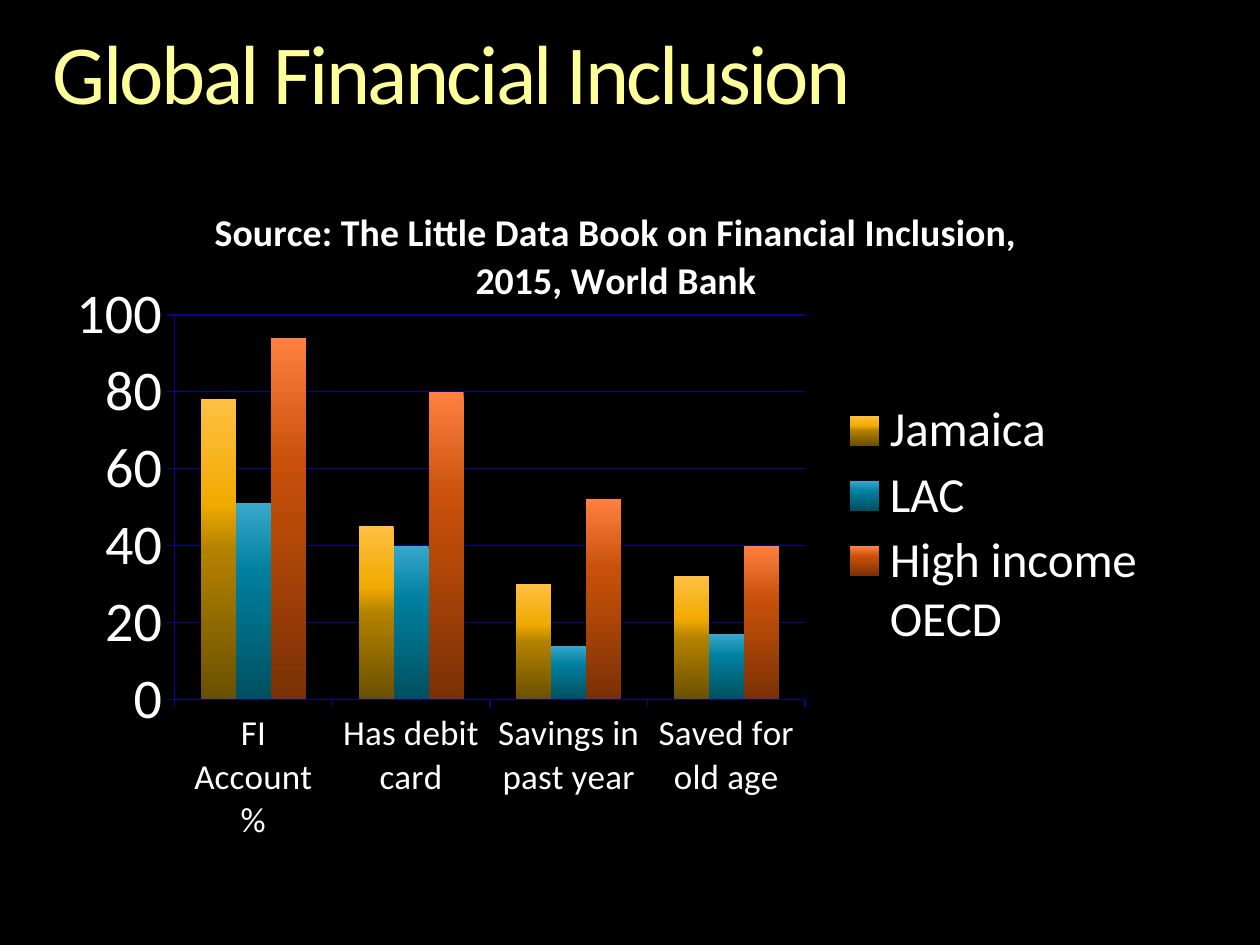
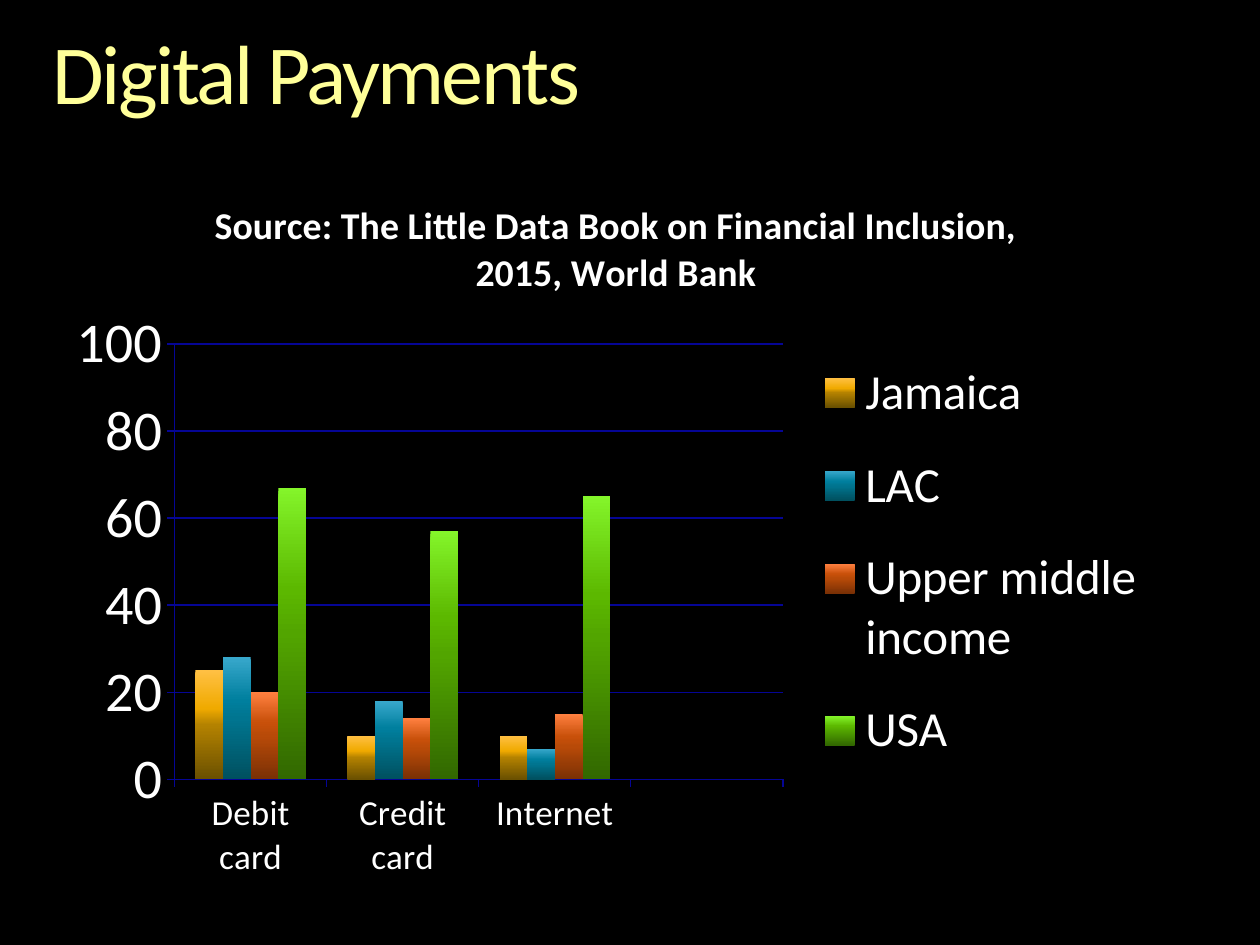
from dataclasses import dataclass

import lxml.etree
import pptx
import pptx.chart.data
import pptx.dml.color
import pptx.enum.chart
import pptx.enum.text
import pptx.oxml
import pptx.oxml.ns
import pptx.util


@dataclass(frozen=True)
class Theme:
    font: str = "Calibri"
    background: str = "000000"
    title: str = "FFFF99"
    text: str = "FFFFFF"
    lines: str = "050595"
    title_size: float = 48
    source_size: float = 21.6
    category_size: float = 20
    value_size: float = 32
    legend_size: float = 28
    line_width: float = 0.75
    # Bar colours from top to bottom, one row per series
    bars: tuple = (
        ("FFC043", "F0AA00", "B48200", "6A5000"),
        ("38A8CC", "007F9E", "007590", "00505F"),
        ("FF8040", "C8500A", "B84A08", "7A3005"),
        ("84F52A", "5CB800", "52A500", "326800"),
    )
    bar_stops: tuple = (0, 35, 50, 100)


theme = Theme()
qn = pptx.oxml.ns.qn
rgb = pptx.dml.color.RGBColor.from_string

SOURCE = "Source: The Little Data Book on Financial Inclusion, 2015, World Bank"

# Layout boxes are left, top, width, height as shares of the chart.
slides = [
    {
        "title": "Global Financial Inclusion",
        "categories": ["FI Account %", "Has debit card",
                       "Savings in past year", "Saved for old age"],
        "series": {
            "Jamaica": (78, 45, 30, 32),
            "LAC": (51, 40, 14, 17),
            "High income OECD": (94, 80, 52, 40),
        },
        "source_at": (0.14, 0.05),
        "plot_at": (0.11, 0.21, 0.57, 0.53),
        "legend_at": (0.71, 0.32, 0.28, 0.36),
    },
    {
        "title": "Digital Payments",
        "categories": ["Debit card", "Credit card", "Internet", ""],
        "series": {
            "Jamaica": (25, 10, 10, None),
            "LAC": (28, 18, 7, None),
            "Upper middle income": (20, 14, 15, None),
            "USA": (67, 57, 65, None),
        },
        "source_at": (0.14, 0.04),
        "plot_at": (0.11, 0.25, 0.55, 0.6),
        "legend_at": (0.69, 0.23, 0.3, 0.64),
    },
]


def place_chart_part(element, index, box, inner=False):
    """Give a chart part a fixed layout, as its child number index."""
    for old_layout in element.findall(qn("c:layout")):
        element.remove(old_layout)
    layout = pptx.oxml.parse_xml(
        f'<c:layout {pptx.oxml.ns.nsdecls("c")}><c:manualLayout/></c:layout>')
    settings = [("layoutTarget", "inner")] if inner else []
    settings += [("xMode", "edge"), ("yMode", "edge")]
    settings += zip("xywh", box)
    for name, value in settings:
        lxml.etree.SubElement(layout[0], qn(f"c:{name}")).set("val", str(value))
    element.insert(index, layout)


def style_font(font, size, color=theme.text, bold=False):
    font.name = theme.font
    font.size = pptx.util.Pt(size)
    font.bold = bold
    font.color.rgb = rgb(color)


presentation = pptx.Presentation()
presentation.slide_width = pptx.util.Inches(10)
presentation.slide_height = pptx.util.Inches(7.5)
master_fill = presentation.slide_master.background.fill
master_fill.solid()
master_fill.fore_color.rgb = rgb(theme.background)
left = pptx.util.Inches(0.42)

for content in slides:
    slide = presentation.slides.add_slide(presentation.slide_layouts[5])

    title = slide.shapes.title
    title.left, title.top = left, pptx.util.Inches(0.25)
    title.width, title.height = pptx.util.Inches(9.17), pptx.util.Inches(0.73)
    frame = title.text_frame
    frame.text = content["title"]
    frame.margin_left = frame.margin_right = frame.margin_top = frame.margin_bottom = 0
    frame.vertical_anchor = pptx.enum.text.MSO_ANCHOR.TOP
    frame.auto_size = pptx.enum.text.MSO_AUTO_SIZE.SHAPE_TO_FIT_TEXT
    paragraph = frame.paragraphs[0]
    paragraph.alignment = pptx.enum.text.PP_ALIGN.LEFT
    paragraph.line_spacing = 0.9
    run = paragraph.runs[0]
    style_font(run.font, theme.title_size, theme.title)
    run.font._element.set("spc", "-150")

    chart_data = pptx.chart.data.CategoryChartData()
    chart_data.categories = content["categories"]
    for name, values in content["series"].items():
        chart_data.add_series(name, values)
    chart = slide.shapes.add_chart(
        pptx.enum.chart.XL_CHART_TYPE.COLUMN_CLUSTERED,
        left, pptx.util.Inches(1.29),
        pptx.util.Inches(8.78), pptx.util.Inches(5.76), chart_data).chart
    style_font(chart.font, 18)

    chart.has_title = True
    source = chart.chart_title.text_frame
    source.text = SOURCE
    style_font(source.paragraphs[0].runs[0].font, theme.source_size, bold=True)
    place_chart_part(chart.chart_title._element, 1, content["source_at"])

    chart.has_legend = True
    chart.legend.position = pptx.enum.chart.XL_LEGEND_POSITION.RIGHT
    chart.legend.include_in_layout = False
    style_font(chart.legend.font, theme.legend_size)
    place_chart_part(chart.legend._element, 1, content["legend_at"])
    place_chart_part(chart._chartSpace.chart.plotArea, 0, content["plot_at"], inner=True)

    value_axis = chart.value_axis
    value_axis.minimum_scale, value_axis.maximum_scale = 0, 100
    value_axis.major_unit = 20
    value_axis.has_major_gridlines = True
    style_font(value_axis.tick_labels.font, theme.value_size)
    style_font(chart.category_axis.tick_labels.font, theme.category_size)
    for axis in (value_axis, chart.category_axis):
        axis.major_tick_mark = pptx.enum.chart.XL_TICK_MARK.OUTSIDE
    for line in (value_axis.format.line, chart.category_axis.format.line,
                 value_axis.major_gridlines.format.line):
        line.width = pptx.util.Pt(theme.line_width)
        line.color.rgb = rgb(theme.lines)

    plot = chart.plots[0]
    plot.gap_width = 150
    plot.overlap = 0
    plot.vary_by_categories = False
    for series, colors in zip(plot.series, theme.bars):
        fill = series.format.fill
        fill.gradient()
        fill.gradient_angle = 270
        stop_list = series._element.find(".//" + qn("a:gsLst"))
        for stop in list(stop_list):
            stop_list.remove(stop)
        for position, color in zip(theme.bar_stops, colors):
            stop = lxml.etree.SubElement(stop_list, qn("a:gs"), pos=str(position * 1000))
            lxml.etree.SubElement(stop, qn("a:srgbClr"), val=color)

presentation.save("out.pptx")
